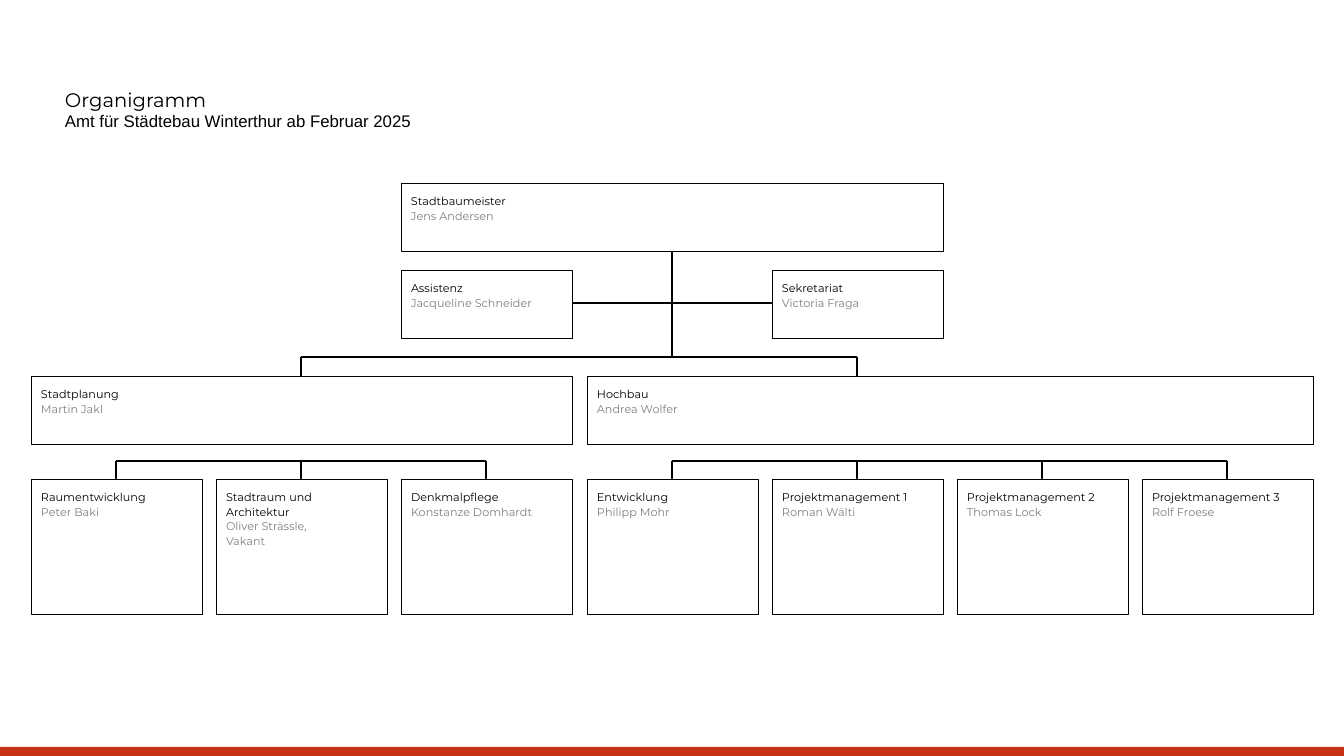
from copy import deepcopy
from dataclasses import dataclass

from lxml.etree import SubElement
from pptx import Presentation
from pptx.dml.color import RGBColor
from pptx.enum.shapes import MSO_CONNECTOR, MSO_SHAPE
from pptx.enum.text import MSO_ANCHOR, PP_ALIGN
from pptx.oxml.ns import qn
from pptx.util import Pt

EMU_PER_PX = 914400 / 100.8


@dataclass(frozen=True)
class Theme:
    black: RGBColor = RGBColor(0, 0, 0)
    white: RGBColor = RGBColor(255, 255, 255)
    grey: RGBColor = RGBColor(0x7F, 0x7F, 0x7F)
    red: RGBColor = RGBColor(0xC8, 0x32, 0x14)
    font: str = "Montserrat"
    subtitle_font: str = "Arial"
    title_size: int = 14
    subtitle_size: int = 12
    box_size: int = 8
    border: float = 0.5
    link: float = 1


THEME = Theme()

# Grid of seven columns
SLIDE_W, SLIDE_H = 1344, 756
LEFT, COL_W, COLS = 31, 171, 7
LAST_LEFT = SLIDE_W - LEFT - COL_W
HEAD_H, TEAM_H = 68, 135
BOSS_Y, STAFF_Y, DIVISION_Y, TEAM_Y = 183, 270, 376, 479
STAFF_LINK_Y, DIVISION_LINK_Y, TEAM_LINK_Y = 303, 357, 461

# First column, columns spanned, top, height, unit, person
BOXES = [
    (2, 3, BOSS_Y, HEAD_H, "Stadtbaumeister", "Jens Andersen"),
    (2, 1, STAFF_Y, HEAD_H, "Assistenz", "Jacqueline Schneider"),
    (4, 1, STAFF_Y, HEAD_H, "Sekretariat", "Victoria Fraga"),
    (0, 3, DIVISION_Y, HEAD_H, "Stadtplanung", "Martin Jakl"),
    (3, 4, DIVISION_Y, HEAD_H, "Hochbau", "Andrea Wolfer"),
]
TEAMS = [
    ("Raumentwicklung", "Peter Baki"),
    ("Stadtraum und Architektur", "Oliver Strässle,\vVakant"),
    ("Denkmalpflege", "Konstanze Domhardt"),
    ("Entwicklung", "Philipp Mohr"),
    ("Projektmanagement 1", "Roman Wälti"),
    ("Projektmanagement 2", "Thomas Lock"),
    ("Projektmanagement 3", "Rolf Froese"),
]


def px(n):
    return round(n * EMU_PER_PX)


def col_left(col):
    return LEFT + round(col * (LAST_LEFT - LEFT) / (COLS - 1))


def col_mid(col):
    return col_left(col) + COL_W // 2


def write(tf, lines, spacing, margins):
    """Fill a frame with one paragraph per (text, font, size, colour)."""
    frame = {"word_wrap": True, "vertical_anchor": MSO_ANCHOR.TOP}
    sides = ("margin_left", "margin_top", "margin_right", "margin_bottom")
    frame.update(zip(sides, map(px, margins)))
    for name, value in frame.items():
        setattr(tf, name, value)
    for i, (text, font, size, color) in enumerate(lines):
        p = tf.paragraphs[0] if i == 0 else tf.add_paragraph()
        p.text = text
        for name, value in {"alignment": PP_ALIGN.LEFT, "line_spacing": spacing}.items():
            setattr(p, name, value)
        for r in p.runs:
            for name, value in {"name": font, "size": Pt(size)}.items():
                setattr(r.font, name, value)
            r.font.color.rgb = color
        # Line breaks take the size of the text around them
        for br in p._p.findall(qn("a:br")):
            br.append(deepcopy(p.runs[0]._r.rPr))


def add_rect(s, x, y, w, h, fill):
    sp = s.shapes.add_shape(MSO_SHAPE.RECTANGLE, px(x), px(y), px(w), px(h))
    sp.shadow.inherit = False
    sp.fill.solid()
    sp.fill.fore_color.rgb = fill
    sp.line.fill.background()
    return sp


def add_box(s, col, span, y, h, unit, person):
    x = col_left(col)
    w = col_left(col + span - 1) + COL_W - x
    sp = add_rect(s, x, y, w, h, THEME.white)
    sp.line.color.rgb = THEME.black
    sp.line.width = Pt(THEME.border)
    lines = [(unit, THEME.font, THEME.box_size, THEME.black),
             (person, THEME.font, THEME.box_size, THEME.grey)]
    write(sp.text_frame, lines, 1.1, (10, 10, 10, 0))


def add_link(s, x1, y1, x2, y2):
    cx = s.shapes.add_connector(MSO_CONNECTOR.STRAIGHT, px(x1), px(y1), px(x2), px(y2))
    cx.line.color.rgb = THEME.black
    cx.line.width = Pt(THEME.link)
    SubElement(cx._element.spPr, qn("a:effectLst"))


def add_branch(s, cols, y, bottom):
    """Horizontal bar with a drop at each of the columns."""
    add_link(s, col_mid(cols[0]), y, col_mid(cols[-1]), y)
    for col in cols:
        add_link(s, col_mid(col), y, col_mid(col), bottom)


def add_title(s):
    tb = s.shapes.add_textbox(px(65), px(89), px(377), px(80))
    lines = [("Organigramm", THEME.font, THEME.title_size, THEME.black),
             ("Amt für Städtebau Winterthur ab Februar 2025",
              THEME.subtitle_font, THEME.subtitle_size, THEME.black)]
    write(tb.text_frame, lines, 0.96, (0, 0, 0, 0))


def main():
    prs = Presentation()
    prs.slide_width, prs.slide_height = px(SLIDE_W), px(SLIDE_H)
    s = prs.slides.add_slide(prs.slide_layouts[6])

    # Footer bar and heading
    add_rect(s, 0, 747, SLIDE_W, 9, THEME.red)
    add_title(s)

    # Links, behind the boxes
    add_link(s, col_mid(3), BOSS_Y + HEAD_H, col_mid(3), DIVISION_LINK_Y)
    add_link(s, col_left(2) + COL_W, STAFF_LINK_Y, col_left(4), STAFF_LINK_Y)
    add_branch(s, (1, 4), DIVISION_LINK_Y, DIVISION_Y)
    for cols in (range(0, 3), range(3, COLS)):
        add_branch(s, cols, TEAM_LINK_Y, TEAM_Y)

    # Management, divisions and teams
    for box in BOXES:
        add_box(s, *box)
    for col, (unit, person) in enumerate(TEAMS):
        add_box(s, col, 1, TEAM_Y, TEAM_H, unit, person)

    prs.save("out.pptx")


if __name__ == "__main__":
    main()
